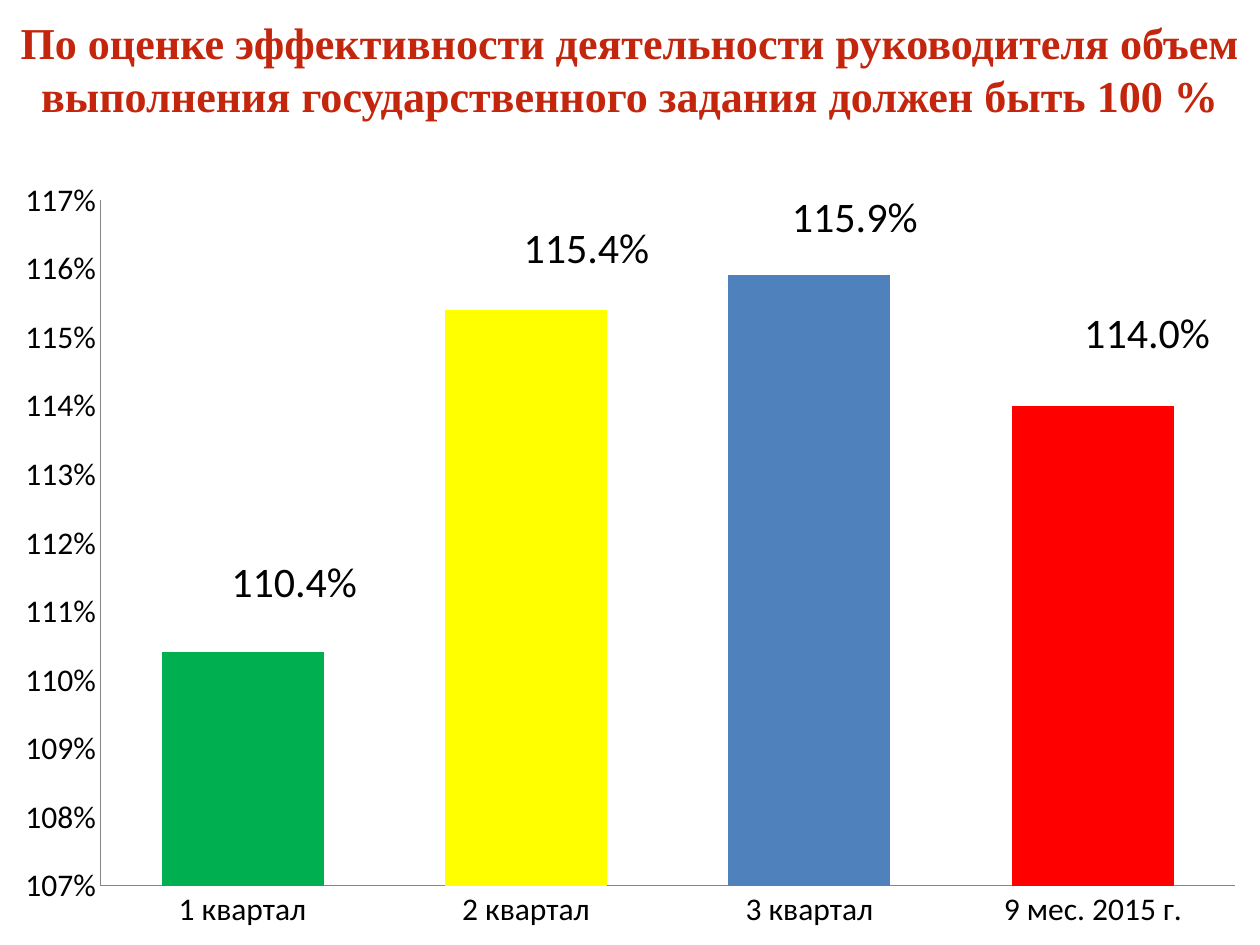
from lxml import etree
from pptx import Presentation
from pptx import util as u
from pptx.chart.data import CategoryChartData
from pptx.dml.color import RGBColor
from pptx.enum import chart as ch, text
from pptx.oxml.ns import qn

PX = u.Inches(1) // 126
W, H = 1260, 945
TITLE_H = 165
CHART_H = H - TITLE_H
BLACK = RGBColor(0, 0, 0)
GREY = RGBColor(0x86, 0x86, 0x86)
TITLE_RED = RGBColor(0xC3, 0x26, 0x0C)
GREEN = RGBColor(0, 0xB0, 0x50)
YELLOW = RGBColor(0xFF, 0xFF, 0)
BLUE = RGBColor(0x4F, 0x81, 0xBD)
RED = RGBColor(0xFF, 0, 0)

TITLE = ("По оценке эффективности деятельности руководителя объем "
         "выполнения государственного задания должен быть 100 %")
QUARTERS = [
    ("1 квартал", 1.104, GREEN, (52, -186)),
    ("2 квартал", 1.154, YELLOW, (60, -348)),
    ("3 квартал", 1.159, BLUE, (45, -362)),
    ("9 мес. 2015 г.", 1.14, RED, (54, -311)),
]


def assign(obj, values):
    for name, value in values.items():
        setattr(obj, name, value)


def layout(**values):
    el = etree.Element(qn("c:layout"))
    manual = etree.SubElement(el, qn("c:manualLayout"))
    for tag, value in values.items():
        etree.SubElement(manual, qn("c:" + tag)).set("val", str(value))
    return el


class Deck:
    """Holds the style and the current slide."""

    def __init__(self):
        self.prs = Presentation()
        assign(self.prs, {"slide_width": W * PX, "slide_height": H * PX})
        self.slide = self.prs.slides.add_slide(self.prs.slide_layouts[5])

    def font(self, font, name, size, color, bold=False):
        assign(font, {"name": name, "size": u.Pt(size), "bold": bold})
        font.color.rgb = color

    def title(self, words, x, y, w, h):
        sp = self.slide.shapes.title
        assign(sp, {"left": x * PX, "top": y * PX, "width": w * PX, "height": h * PX})
        tf = sp.text_frame
        assign(tf, {"word_wrap": True, "auto_size": text.MSO_AUTO_SIZE.NONE,
                    "vertical_anchor": text.MSO_ANCHOR.MIDDLE,
                    "margin_left": 0, "margin_right": 0,
                    "margin_top": 0, "margin_bottom": 29 * PX})
        p = tf.paragraphs[0]
        assign(p, {"alignment": text.PP_ALIGN.CENTER, "line_spacing": 1.0})
        r = p.add_run()
        r.text = words
        self.font(r.font, "Times New Roman", 25.2, TITLE_RED, True)

    def columns(self, rows, x, y, w, h):
        data = CategoryChartData(number_format="0.0%")
        data.categories = [row[0] for row in rows]
        data.add_series("Series 1", [row[1] for row in rows])
        chart = self.slide.shapes.add_chart(
            ch.XL_CHART_TYPE.COLUMN_STACKED, x * PX, y * PX, w * PX, h * PX, data).chart
        assign(chart, {"has_legend": False, "has_title": False})
        self.font(chart.font, "Calibri", 18, BLACK)
        self.axes(chart)
        plot = chart.plots[0]
        assign(plot, {"gap_width": 75, "overlap": 100, "vary_by_categories": False})
        self.points(plot, rows, w, h)
        area = chart._chartSpace.chart.plotArea
        for old in area.findall(qn("c:layout")):
            area.remove(old)
        area.insert(0, layout(layoutTarget="inner", xMode="edge", yMode="edge",
                              x=0.08, y=round(35 / h, 3), w=0.9, h=round(686 / h, 3)))

    def axes(self, chart):
        value = chart.value_axis
        assign(value, {"minimum_scale": 1.07, "maximum_scale": 1.17,
                       "major_unit": 0.01, "has_major_gridlines": False})
        assign(value.tick_labels, {"number_format": "0%", "number_format_is_linked": False})
        for axis in (value, chart.category_axis):
            assign(axis, {"major_tick_mark": ch.XL_TICK_MARK.NONE,
                          "minor_tick_mark": ch.XL_TICK_MARK.NONE})
            axis.format.line.color.rgb = GREY
            axis.format.line.width = u.Pt(0.75)

    def points(self, plot, rows, w, h):
        series = plot.series[0]
        series.format.fill.solid()
        series.format.fill.fore_color.rgb = YELLOW
        assign(series.data_labels, {"show_value": True, "number_format": "0.0%",
                                    "number_format_is_linked": False})
        for i, (_, _, color, _) in enumerate(rows):
            point = series.points[i]
            point.format.fill.solid()
            point.format.fill.fore_color.rgb = color
            self.font(point.data_label.font, "Calibri", 24, BLACK)
        group = series._element.find(qn("c:dLbls"))
        for label, (_, _, _, (dx, dy)) in zip(group.findall(qn("c:dLbl")), rows):
            label.insert(1, layout(x=round(dx / w, 3), y=round(dy / h, 3)))
        self.hide_leader_lines(group)

    def hide_leader_lines(self, group):
        tag = qn("c:showLeaderLines")
        leader = group.find(tag)
        if leader is None:
            leader = etree.SubElement(group, tag)
        leader.set("val", "0")
        c15 = "http://schemas.microsoft.com/office/drawing/2012/chart"
        extensions = etree.SubElement(group, qn("c:extLst"))
        ext = etree.SubElement(extensions, qn("c:ext"), nsmap={"c15": c15})
        ext.set("uri", "{CE6537A1-D6FC-4f65-9D91-7224C49458BB}")
        etree.SubElement(ext, "{%s}showLeaderLines" % c15).set("val", "0")


def main():
    deck = Deck()
    deck.title(TITLE, 0, 0, W, TITLE_H)
    deck.columns(QUARTERS, 0, TITLE_H, W, CHART_H)
    deck.prs.save("out.pptx")


if __name__ == "__main__":
    main()
